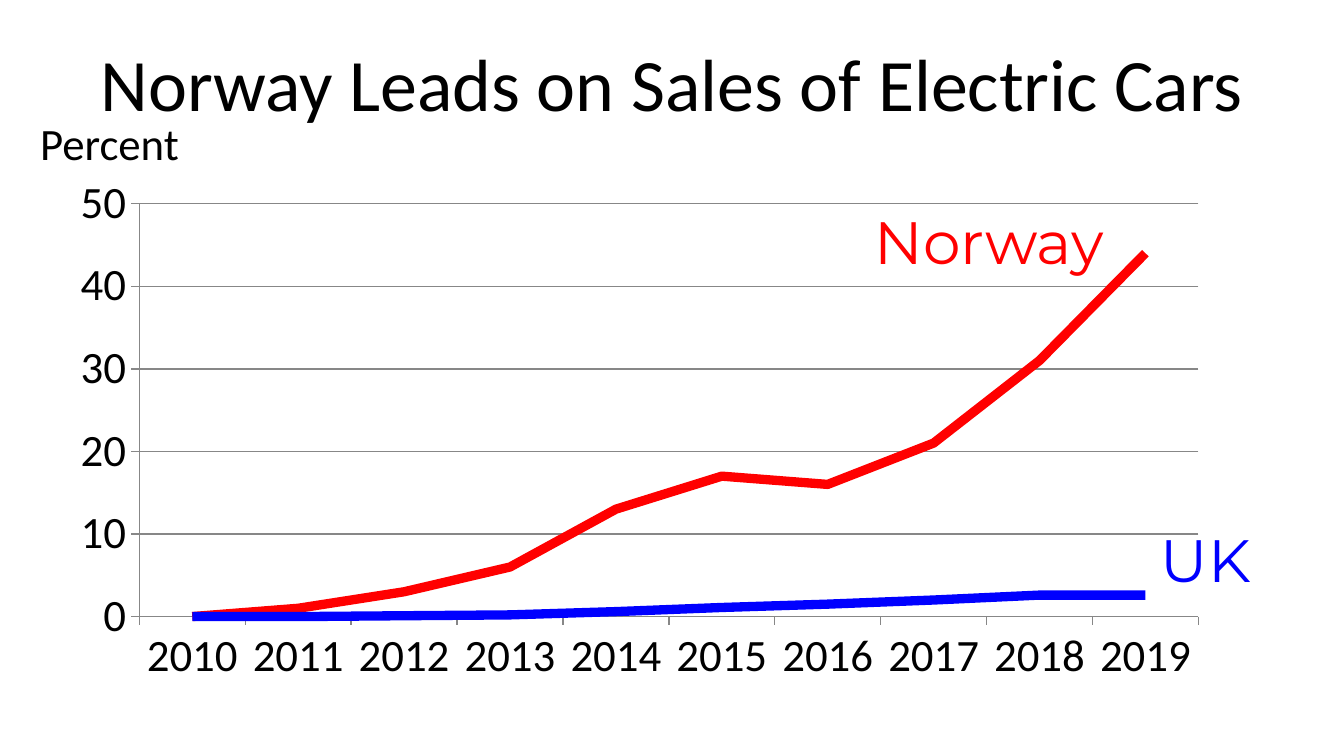
from dataclasses import dataclass

from lxml import etree
from pptx import Presentation
from pptx.chart.data import CategoryChartData
from pptx.dml.color import RGBColor
from pptx.enum.chart import XL_CHART_TYPE, XL_TICK_MARK
from pptx.enum.text import MSO_ANCHOR, PP_ALIGN
from pptx.oxml.ns import qn
from pptx.util import Pt

LINE_CHART = XL_CHART_TYPE.LINE
TICK_OUTSIDE, TICK_NONE = XL_TICK_MARK.OUTSIDE, XL_TICK_MARK.NONE
LEFT, CENTER = PP_ALIGN.LEFT, PP_ALIGN.CENTER
TOP, MIDDLE = MSO_ANCHOR.TOP, MSO_ANCHOR.MIDDLE

BLACK, RED, BLUE, GRAY = "000000", "FF0000", "0000FF", "878787"
BODY_FONT, LABEL_FONT = "Calibri", "Montserrat"


@dataclass
class Label:
    text: str
    left: float
    top: float
    width: float
    height: float
    size: float
    font: str = BODY_FONT
    color: str = BLACK
    align: PP_ALIGN = CENTER
    anchor: MSO_ANCHOR = TOP


@dataclass
class Country:
    series_name: str
    color: str
    shares: list[float]


TITLE = Label("Norway Leads on Sales of Electric Cars", 36, 10, 648, 68, 39.6,
              anchor=MIDDLE)
CHART_LABELS = [
    Label("Norway", 450, 106, 160, 45, 32, LABEL_FONT, RED),
    Label("UK", 586, 276.5, 120, 45, 32, LABEL_FONT, BLUE),
    Label("Percent", 14.4, 58.3, 96.5, 36, 24, align=LEFT),
]
YEARS = [str(year) for year in range(2010, 2020)]
COUNTRIES = [
    Country("Series 1", RED, [0, 1, 3, 6, 13, 17, 16, 21, 31, 44]),
    Country("Series 2", BLUE, [0, 0, 0.1, 0.2, 0.6, 1.1, 1.5, 2, 2.6, 2.6]),
]
# Plot area as fractions of the chart frame
PLOT_AREA = {"x": 0.07, "y": 0.07, "w": 0.91, "h": 0.78}


def rgb(value: str) -> RGBColor:
    return RGBColor.from_string(value)


def add_label(page, label: Label) -> None:
    box = page.shapes.add_textbox(Pt(label.left), Pt(label.top),
                                  Pt(label.width), Pt(label.height))
    frame = box.text_frame
    frame.word_wrap = True
    frame.vertical_anchor = label.anchor
    para = frame.paragraphs[0]
    para.alignment = label.align
    span = para.add_run()
    span.text = label.text
    span.font.name = label.font
    span.font.size = Pt(label.size)
    span.font.color.rgb = rgb(label.color)


def style_line(line, color: str, width: float) -> None:
    line.color.rgb = rgb(color)
    line.width = Pt(width)


def fix_plot_area(chart) -> None:
    plot_area = chart.element.find(".//" + qn("c:plotArea"))
    layout = plot_area.find(qn("c:layout"))
    if layout is None:
        layout = etree.Element(qn("c:layout"))
        plot_area.insert(0, layout)
    manual = etree.SubElement(layout, qn("c:manualLayout"))
    settings = {"layoutTarget": "inner", "xMode": "edge", "yMode": "edge", **PLOT_AREA}
    for name, value in settings.items():
        etree.SubElement(manual, qn(f"c:{name}")).set("val", str(value))


def add_sales_chart(page) -> None:
    data = CategoryChartData(number_format="General")
    data.categories = YEARS
    for country in COUNTRIES:
        data.add_series(country.series_name, country.shares)
    chart = page.shapes.add_chart(LINE_CHART, Pt(31), Pt(89.3), Pt(623.5),
                                  Pt(283.7), data).chart
    chart.has_legend = False
    chart.has_title = False
    chart.font.name = BODY_FONT
    chart.font.size = Pt(24)
    chart.font.color.rgb = rgb(BLACK)
    fix_plot_area(chart)

    # Axes and gridlines
    for axis in (chart.category_axis, chart.value_axis):
        axis.major_tick_mark = TICK_OUTSIDE
        axis.minor_tick_mark = TICK_NONE
        style_line(axis.format.line, GRAY, 0.75)
    scale = chart.value_axis
    scale.minimum_scale, scale.maximum_scale, scale.major_unit = 0, 50, 10
    scale.tick_labels.number_format = "0"
    scale.tick_labels.number_format_is_linked = False
    scale.has_major_gridlines = True
    style_line(scale.major_gridlines.format.line, GRAY, 0.75)

    # Country lines
    chart.plots[0].vary_by_categories = False
    for series, country in zip(chart.plots[0].series, COUNTRIES):
        series.smooth = False
        style_line(series.format.line, country.color, 5)


def main() -> None:
    deck = Presentation()
    deck.slide_width, deck.slide_height = Pt(720), Pt(405)
    page = deck.slides.add_slide(deck.slide_layouts[6])
    add_label(page, TITLE)
    add_sales_chart(page)
    for label in CHART_LABELS:
        add_label(page, label)
    deck.save("out.pptx")


if __name__ == "__main__":
    main()
